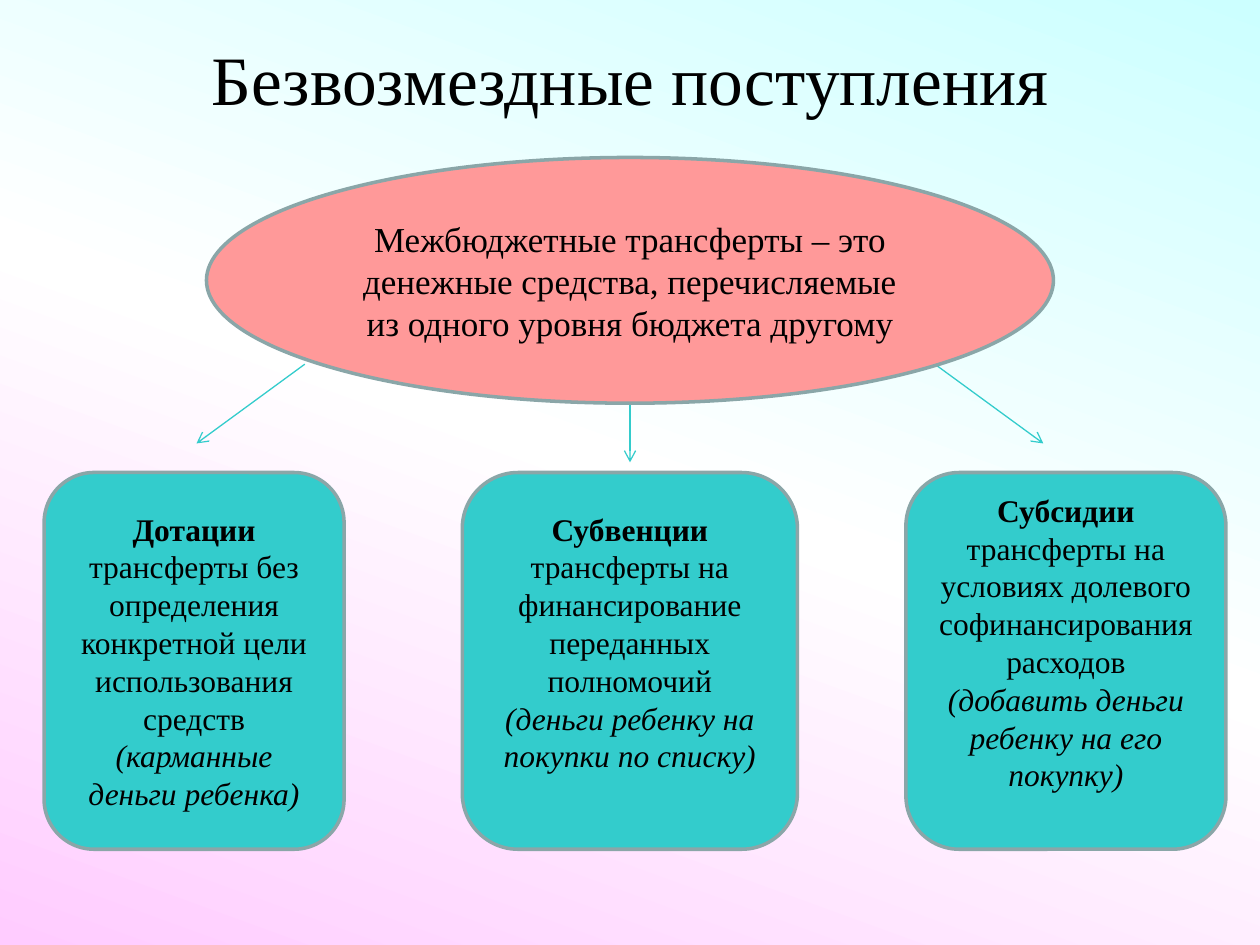
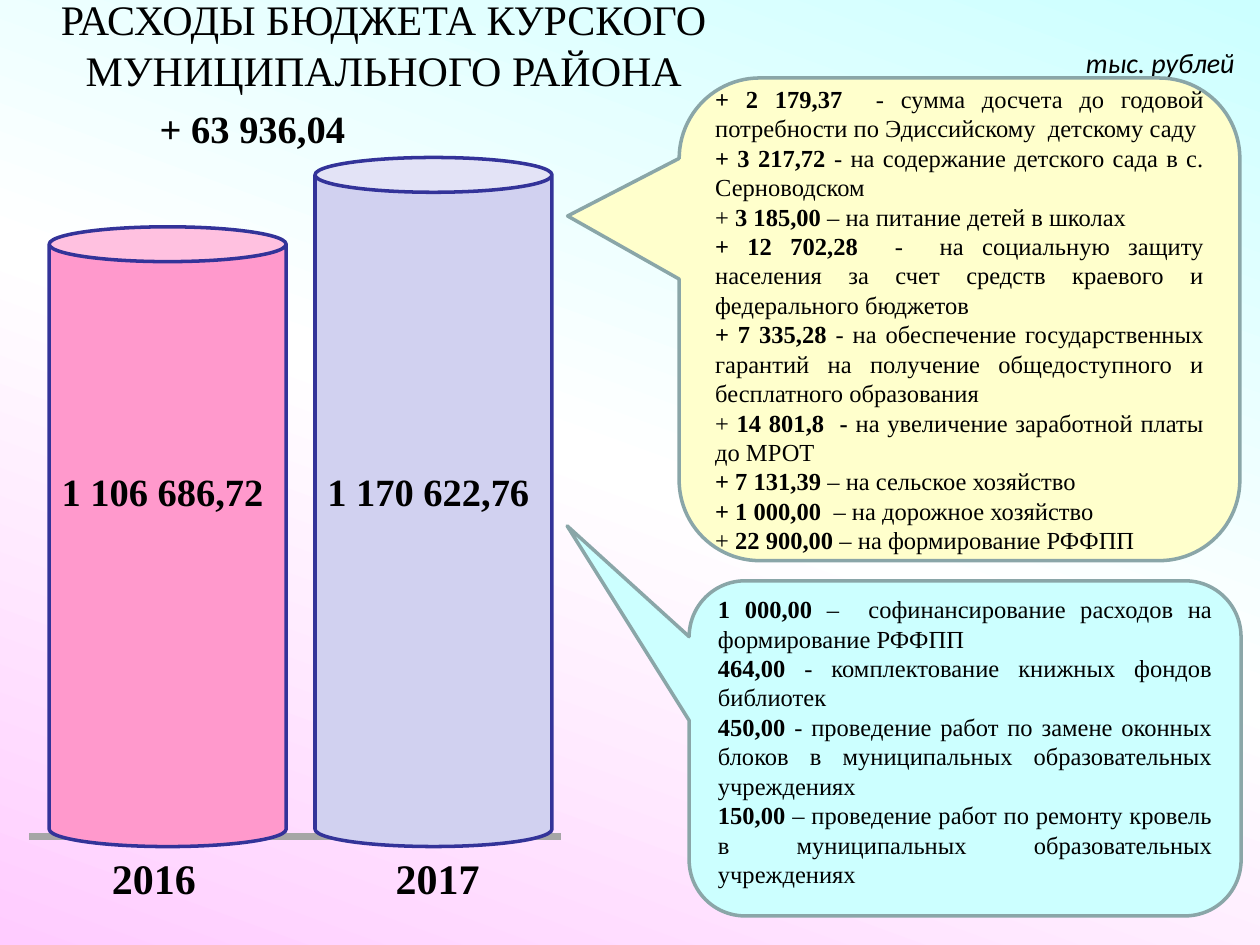
from dataclasses import dataclass

from lxml import etree
from pptx import Presentation
from pptx.dml.color import RGBColor
from pptx.enum.shapes import MSO_CONNECTOR, MSO_SHAPE
from pptx.enum.text import MSO_ANCHOR, MSO_AUTO_SIZE, PP_ALIGN
from pptx.oxml.ns import qn
from pptx.util import Pt

LEFT, CENTER, JUSTIFY = PP_ALIGN.LEFT, PP_ALIGN.CENTER, PP_ALIGN.JUSTIFY
TOP, MIDDLE = MSO_ANCHOR.TOP, MSO_ANCHOR.MIDDLE
STRAIGHT = MSO_CONNECTOR.STRAIGHT
OVAL, CAN = MSO_SHAPE.OVAL, MSO_SHAPE.CAN
CARD = MSO_SHAPE.FLOWCHART_ALTERNATE_PROCESS
CALLOUT = MSO_SHAPE.ROUNDED_RECTANGULAR_CALLOUT
TITLE_ONLY = 5


@dataclass(frozen=True)
class Theme:
    serif: str = "Times New Roman"
    sans: str = "Calibri"
    ink: str = "000000"
    outline: str = "8AA6A8"
    teal: str = "33CCCC"
    coral: str = "FF9999"
    cylinder_edge: str = "333399"
    baseline: str = "A6A6A6"
    backdrop: tuple = ((0, "CCFFFF"), (50, "FFFFFF"), (100, "FFCCFF"))
    backdrop_angle: int = 110
    edge: float = 2
    title_size: float = 39.6
    heading_size: float = 24
    amount_size: float = 22
    definition_size: float = 20
    card_size: float = 18
    unit_size: float = 16
    note_size: float = 14


THEME = Theme()

TRANSFERS_TITLE = ["Безвозмездные поступления"]
DEFINITION = ("Межбюджетные трансферты – это денежные средства, "
              "перечисляемые из одного уровня бюджета другому")
TRANSFERS = [
    dict(name="Дотации ", example="(карманные деньги ребенка)",
         meaning="трансферты без определения конкретной цели использования средств",
         left=25.2, width=171.4, lift=0, arrow=(174.2, 208.1, 112.3, 253.4)),
    dict(name="Субвенции ", example="(деньги ребенку на покупки по списку)",
         meaning="трансферты на финансирование переданных полномочий",
         left=264.2, width=191.5, lift=21.6, arrow=(360, 224.6, 360, 264.2)),
    dict(name="Субсидии ", example="(добавить деньги ребенку на его покупку)",
         meaning="трансферты на условиях долевого софинансирования расходов",
         left=517.7, width=182.9, lift=21.6, arrow=(534.2, 208.1, 596.2, 253.4)),
]

EXPENSES_TITLE = ["РАСХОДЫ БЮДЖЕТА КУРСКОГО", "МУНИЦИПАЛЬНОГО РАЙОНА"]
UNIT = "тыс. рублей"
GROWTH = "+ 63 936,04"
YEARS = [
    dict(year="2016", amount="1 106 686,72", top=129.6, fill="FF99CC", label_left=56.8),
    dict(year="2017", amount="1 170 622,76", top=90, fill="D1D1F0", label_left=219),
]
CALLOUTS = [
    dict(box=(388.1, 44.6, 320.4, 275.8), pointer=(-0.699, -0.214, 0.167),
         fill="FFFFCC", lift=0, items=[
             ("", "+ 2 179,37  ", "- сумма досчета до годовой потребности "
              "по Эдиссийскому  детскому саду"),
             ("", "+ 3 217,72 ", "- на содержание детского сада в с. Серноводском"),
             ("+ ", "3 185,00 ", "– на питание детей в школах"),
             ("", "+ 12 702,28  ", "-  на социальную защиту населения за счет "
              "средств краевого и федерального бюджетов"),
             ("", "+ 7 335,28 ", "- на обеспечение государственных гарантий на "
              "получение общедоступного и бесплатного образования"),
             ("+ ", "14 801,8  - ", "на увеличение заработной платы до МРОТ"),
             ("", "+ 7 131,39 ", "– на сельское хозяйство"),
             ("", "+ 1 000,00", "  – на дорожное хозяйство"),
             ("+ ", "22 900,00", " – на формирование РФФПП"),
         ]),
    dict(box=(393.8, 331.9, 315.4, 191.5), pointer=(-0.721, -0.664, 0.167),
         fill="CCFFFF", lift=8, items=[
             ("", "1 000,00 ", "–  софинансирование расходов на формирование РФФПП"),
             ("", "464,00 ", "- комплектование книжных фондов библиотек"),
             ("", "450,00", " - проведение работ по замене оконных блоков "
              "в муниципальных образовательных учреждениях"),
             ("", "150,00", " – проведение работ по ремонту кровель "
              "в муниципальных образовательных учреждениях"),
         ]),
]


def rgb(value):
    return RGBColor.from_string(value)


def points(*values):
    return [Pt(value) for value in values]


def paint_backdrop(master):
    fill = master.background.fill
    fill.gradient()
    fill.gradient_angle = 360 - THEME.backdrop_angle
    stops = next(master._element.iter(qn("a:gsLst")))
    for stop in list(stops):
        stops.remove(stop)
    for position, color in THEME.backdrop:
        stop = etree.SubElement(stops, qn("a:gs"), pos=str(position * 1000))
        etree.SubElement(stop, qn("a:srgbClr"), val=color)


def write(holder, paragraphs, size, align=LEFT, anchor=TOP, font=THEME.serif,
          bold=False, italic=False, lift=0):
    frame = holder.text_frame
    frame.word_wrap = True
    frame.auto_size = MSO_AUTO_SIZE.NONE
    frame.vertical_anchor = anchor
    frame.margin_bottom = Pt(3.6 + lift)
    for index, content in enumerate(paragraphs):
        paragraph = frame.add_paragraph() if index else frame.paragraphs[0]
        paragraph.alignment = align
        style = paragraph.font
        style.name, style.size = font, Pt(size)
        style.color.rgb = rgb(THEME.ink)
        style.bold, style.italic = bold, italic
        if isinstance(content, str):
            paragraph.add_run().text = content
            continue
        for text, strong in content:
            if text:
                run = paragraph.add_run()
                run.text = text
                run.font.bold = strong
    return frame


def add_titled_slide(deck, lines, box, size):
    slide = deck.slides.add_slide(deck.slide_layouts[TITLE_ONLY])
    title = slide.shapes.title
    title.left, title.top, title.width, title.height = points(*box)
    write(title, lines, size, CENTER, MIDDLE)
    return slide


def add_figure(slide, kind, box, fill, edge=THEME.outline, adjustments=()):
    figure = slide.shapes.add_shape(kind, *points(*box))
    figure.shadow.inherit = False
    figure.fill.solid()
    figure.fill.fore_color.rgb = rgb(fill)
    figure.line.color.rgb = rgb(edge)
    figure.line.width = Pt(THEME.edge)
    for index, value in enumerate(adjustments):
        figure.adjustments[index] = value
    return figure


def add_line(slide, ends, color, width, arrow=False):
    line = slide.shapes.add_connector(STRAIGHT, *points(*ends))
    line.line.color.rgb = rgb(color)
    line.line.width = Pt(width)
    properties = line._element.spPr
    if arrow:
        etree.SubElement(properties.find(qn("a:ln")), qn("a:tailEnd"), type="arrow")
    etree.SubElement(properties, qn("a:effectLst"))


def add_label(slide, text, box, size, **style):
    write(slide.shapes.add_textbox(*points(*box)), [text], size, **style)


def build_transfers(deck):
    slide = add_titled_slide(deck, TRANSFERS_TITLE, (36, 21.6, 648, 46), THEME.title_size)
    for transfer in TRANSFERS:
        card = add_figure(slide, CARD, (transfer["left"], 270, transfer["width"], 215.3),
                          THEME.teal)
        frame = write(card, [[(transfer["name"], True), (transfer["meaning"], False)],
                             transfer["example"]],
                      THEME.card_size, CENTER, MIDDLE, lift=transfer["lift"])
        frame.paragraphs[1].font.italic = True
        add_line(slide, transfer["arrow"], THEME.teal, 0.75, arrow=True)
    definition = add_figure(slide, OVAL, (118, 90, 484, 140.4), THEME.coral)
    write(definition, [DEFINITION], THEME.definition_size, CENTER, MIDDLE)


def build_expenses(deck):
    slide = add_titled_slide(deck, EXPENSES_TITLE, (0, 0, 438.5, 50.4), THEME.heading_size)
    first_left, step, width, floor = 28.1, 151.9, 135.4, 483.8
    add_line(slide, (16.6, 478, 320.4, 478), THEME.baseline, 4.25)
    for index, entry in enumerate(YEARS):
        left = first_left + index * step
        add_figure(slide, CAN, (left, entry["top"], width, floor - entry["top"]),
                   entry["fill"], THEME.cylinder_edge, (0.147,))
        add_label(slide, entry["amount"], (left, 264.2, width, 33.8),
                  THEME.amount_size, bold=True)
        add_label(slide, entry["year"], (entry["label_left"], floor, 80, 36),
                  THEME.heading_size, bold=True)
    add_label(slide, GROWTH, (84.2, 56.2, width, 33.8), THEME.amount_size, bold=True)
    add_label(slide, UNIT, (613.4, 22.3, 104, 26.6), THEME.unit_size,
              font=THEME.sans, italic=True)
    for callout in CALLOUTS:
        bubble = add_figure(slide, CALLOUT, callout["box"], callout["fill"],
                            adjustments=callout["pointer"])
        items = [[(sign, False), (amount, True), (purpose, False)]
                 for sign, amount, purpose in callout["items"]]
        write(bubble, items, THEME.note_size, JUSTIFY, MIDDLE, lift=callout["lift"])


def main():
    deck = Presentation()
    deck.slide_width, deck.slide_height = points(720, 540)
    paint_backdrop(deck.slide_master)
    build_transfers(deck)
    build_expenses(deck)
    deck.save("out.pptx")


if __name__ == "__main__":
    main()
